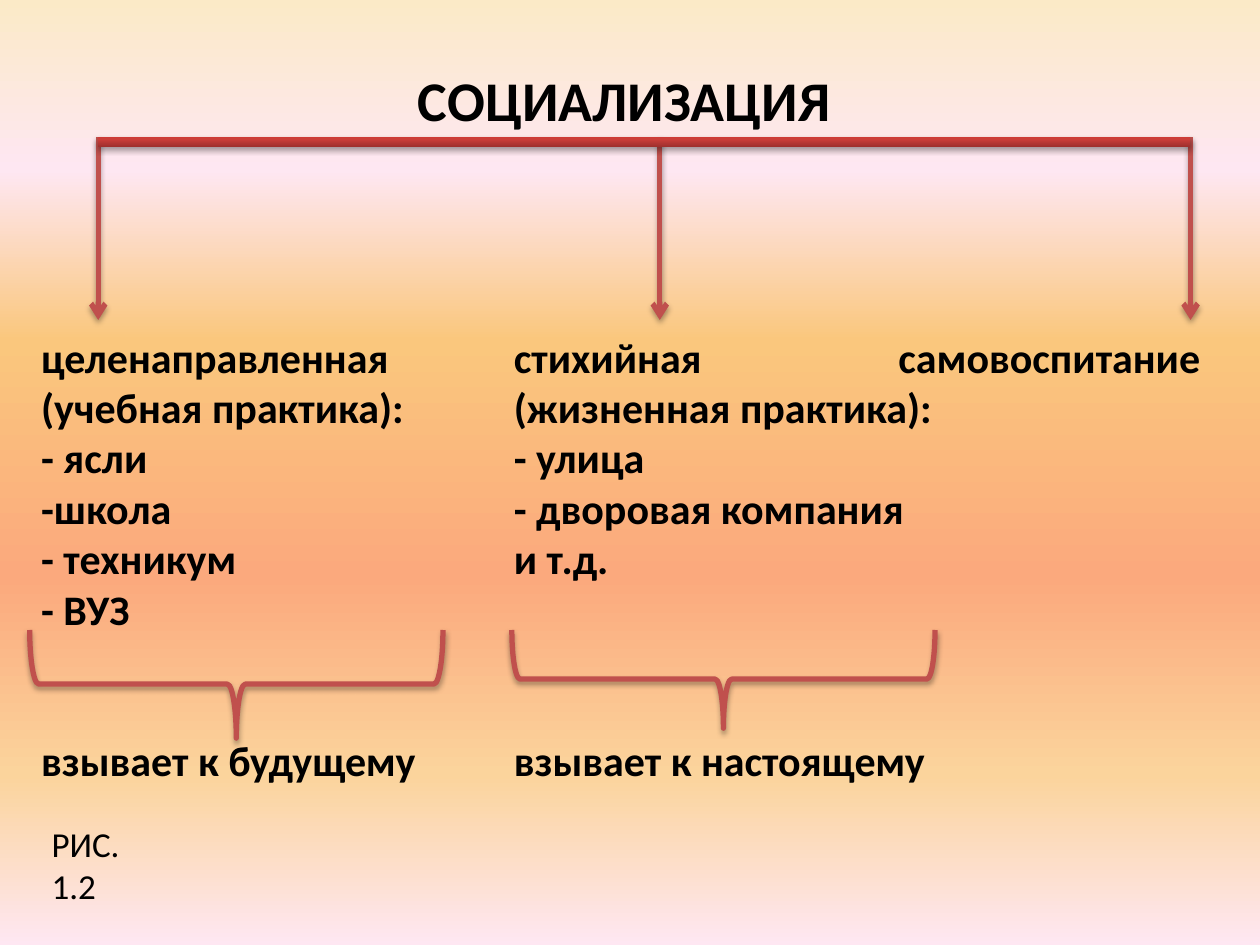
from lxml import etree
from pptx import Presentation
from pptx.dml.color import RGBColor
from pptx.enum import shapes, text
from pptx.oxml.ns import qn
from pptx.util import Cm, Pt

BLACK = RGBColor(0x00, 0x00, 0x00)
RED = RGBColor(0xC0, 0x50, 0x4D)
FONT = "Calibri"

BACKGROUND_STOPS = [(0, "FBEAC7"), (18, "FEE7F2"), (36, "FAC77D"),
                    (61, "FBA97D"), (82, "FBD49C"), (100, "FEE7F2")]
BAR_STOPS = [(0, "9C2F2D"), (80, "CB3E3A"), (100, "CE3B37")]

# Text: lines, left, top, width, height, size, bold, alignment
LEFT, CENTER = text.PP_ALIGN.LEFT, text.PP_ALIGN.CENTER
COLUMN_TOP, APPEAL_TOP = 6.55, 14.68
TEXTS = [
    (["СОЦИАЛИЗАЦИЯ"], 4.75, 1.19, 15.67, 1.63, 32, True, CENTER),
    (["целенаправленная", "(учебная практика):", "- ясли", "-школа",
      "- техникум", "- ВУЗ"], 0.58, COLUMN_TOP, 9.12, 6.6, 24, True, LEFT),
    (["взывает к будущему"], 0.58, APPEAL_TOP, 9.12, 1.27, 24, True, LEFT),
    (["стихийная", "(жизненная практика):", "- улица",
      "- дворовая компания", "и т.д."],
     10.11, COLUMN_TOP, 8.94, 6.6, 24, True, LEFT),
    (["взывает к настоящему"], 10.11, APPEAL_TOP, 8.94, 1.27, 24, True, LEFT),
    (["самовоспитание"], 17.86, COLUMN_TOP, 7.54, 1.27, 24, True, LEFT),
    (["РИС.", "1.2"], 0.79, 16.46, 2.97, 1.96, 20, False, LEFT),
]

# Bar with arrows hanging from it
BAR_LEFT, BAR_TOP, BAR_WIDTH, BAR_HEIGHT = 1.98, 2.77, 22.02, 0.2
ARROW_XS = [BAR_LEFT, 13.3, BAR_LEFT + BAR_WIDTH]
ARROW_END = 6.45

# Braces as seen on the slide: left, top, width, height
BRACES = [(0.6, 12.7, 8.33, 2.18), (10.32, 12.7, 8.53, 1.98)]


def set_gradient(fill, element, stops, angle):
    fill.gradient()
    fill.gradient_angle = angle
    stop_list = next(element.iter(qn("a:gsLst")))
    for old_stop in list(stop_list):
        stop_list.remove(old_stop)
    for position, color in stops:
        stop = etree.SubElement(stop_list, qn("a:gs"), pos=str(position * 1000))
        etree.SubElement(stop, qn("a:srgbClr"), val=color)


def add_shadow(shape):
    effects = etree.SubElement(shape.element.spPr, qn("a:effectLst"))
    shadow = etree.SubElement(effects, qn("a:outerShdw"), blurRad="40000",
                              dist="23000", dir="5400000", rotWithShape="0")
    color = etree.SubElement(shadow, qn("a:srgbClr"), val="000000")
    etree.SubElement(color, qn("a:alpha"), val="35000")


def set_red_line(shape):
    shape.line.color.rgb = RED
    shape.line.width = Pt(3)
    add_shadow(shape)


def add_text(page, lines, left, top, width, height, size, bold, alignment):
    box = page.shapes.add_textbox(Cm(left), Cm(top), Cm(width), Cm(height))
    frame = box.text_frame
    frame.word_wrap = True
    frame.auto_size = text.MSO_AUTO_SIZE.SHAPE_TO_FIT_TEXT
    frame.text = "\n".join(lines)
    for para in frame.paragraphs:
        para.alignment = alignment
        para.font.name = FONT
        para.font.size = Pt(size)
        para.font.bold = bold
        para.font.color.rgb = BLACK


def add_arrow(page, x):
    arrow = page.shapes.add_connector(
        shapes.MSO_CONNECTOR.STRAIGHT, Cm(x), Cm(BAR_TOP), Cm(x), Cm(ARROW_END))
    set_red_line(arrow)
    etree.SubElement(arrow.line._get_or_add_ln(), qn("a:tailEnd"), type="arrow")


def add_brace(page, left, top, width, height):
    # A left brace turned by 270 degrees about its centre
    shift = (width - height) / 2
    brace = page.shapes.add_shape(
        shapes.MSO_SHAPE.LEFT_BRACE,
        Cm(left + shift), Cm(top - shift), Cm(height), Cm(width))
    brace.rotation = 270
    brace.fill.background()
    set_red_line(brace)


def add_bar(page):
    bar = page.shapes.add_shape(shapes.MSO_SHAPE.RECTANGLE, Cm(BAR_LEFT),
                                Cm(BAR_TOP), Cm(BAR_WIDTH), Cm(BAR_HEIGHT))
    set_gradient(bar.fill, bar.element, BAR_STOPS, 90)
    bar.line.fill.background()
    add_shadow(bar)


def main():
    deck = Presentation()
    deck.slide_width, deck.slide_height = Cm(25.4), Cm(19.05)
    page = deck.slides.add_slide(deck.slide_layouts[6])
    set_gradient(page.background.fill, page.element, BACKGROUND_STOPS, 270)

    for item in TEXTS:
        add_text(page, *item)
    for x in ARROW_XS:
        add_arrow(page, x)
    for brace in BRACES:
        add_brace(page, *brace)
    add_bar(page)

    deck.save("out.pptx")


if __name__ == "__main__":
    main()
